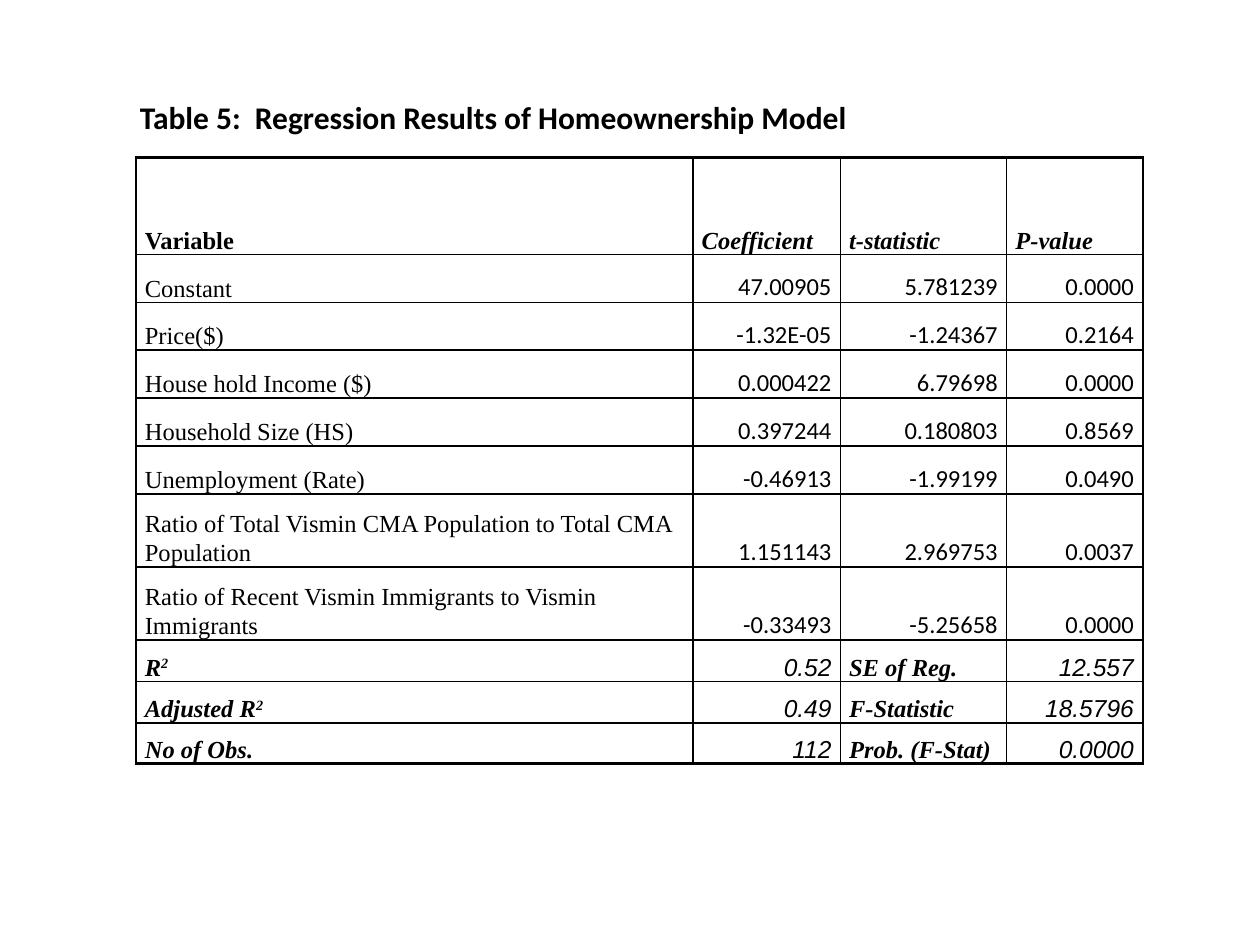
import lxml.etree
import pptx
import pptx.dml.color
import pptx.enum.text
import pptx.oxml.ns
import pptx.util

Inches = pptx.util.Inches
Pt = pptx.util.Pt
ALIGN = pptx.enum.text.PP_ALIGN
ANCHOR = pptx.enum.text.MSO_ANCHOR
COLORS = {"ink": "000000", "paper": "FFFFFF"}

SERIF = {"name": "Times New Roman", "bold": False, "italic": False}
NUMBER = {"name": "Calibri", "bold": False, "italic": False}
HEADING = {"name": "Times New Roman", "bold": True, "italic": False}
LABEL = {"name": "Times New Roman", "bold": True, "italic": True}
SUMMARY = {"name": "Arial", "bold": False, "italic": True}

HEADER = ["Variable", "Coefficient", "t-statistic", "P-value"]
ESTIMATES = [
    ["Constant", "47.00905", "5.781239", "0.0000"],
    ["Price($)", "-1.32E-05", "-1.24367", "0.2164"],
    ["House hold Income ($)", "0.000422", "6.79698", "0.0000"],
    ["Household Size (HS)", "0.397244", "0.180803", "0.8569"],
    ["Unemployment (Rate)", "-0.46913", "-1.99199", "0.0490"],
    ["Ratio of Total Vismin CMA Population to Total CMA Population",
     "1.151143", "2.969753", "0.0037"],
    ["Ratio of Recent Vismin Immigrants to Vismin Immigrants",
     "-0.33493", "-5.25658", "0.0000"],
]
FIT = [
    ["R^2", "0.52", "SE of Reg.", "12.557"],
    ["Adjusted R^2", "0.49", "F-Statistic", "18.5796"],
    ["No of Obs.", "112", "Prob. (F-Stat)", "0.0000"],
]
COLUMN_WIDTHS = [4.42, 1.17, 1.32, 1.08]
ROW_HEIGHTS = [0.77] + [0.38] * 5 + [0.58] * 2 + [0.33, 0.33, 0.32]


class SlideBuilder:
    def __init__(self, deck):
        self.slide = deck.slides.add_slide(deck.slide_layouts[5])

    def set_format(self, target, values):
        for name, value in values.items():
            setattr(target, name, value)

    def add_text(self, para, text, size, style):
        base, _, exponent = text.partition("^")
        for part, baseline in ((base, None), (exponent, "30000")):
            if part:
                span = para.add_run()
                span.text = part
                self.set_format(span.font, {"size": Pt(size), **style})
                span.font.color.rgb = pptx.dml.color.RGBColor.from_string(COLORS["ink"])
                if baseline:
                    span.font._element.set("baseline", baseline)

    def title(self, text, left, top, width, height):
        box = self.slide.shapes.title
        self.set_format(box, {"left": Inches(left), "top": Inches(top),
                              "width": Inches(width), "height": Inches(height)})
        self.set_format(box.text_frame, {"margin_left": Inches(0.61), "word_wrap": True,
                                         "vertical_anchor": ANCHOR.MIDDLE})
        para = box.text_frame.paragraphs[0]
        para.alignment = ALIGN.LEFT
        self.add_text(para, text, 18, {"name": "Calibri", "bold": True})

    def border(self, cell, side, width):
        properties = cell._tc.get_or_add_tcPr()
        line = lxml.etree.SubElement(properties, pptx.oxml.ns.qn(f"a:ln{side}"), w=str(Pt(width)))
        fill = lxml.etree.SubElement(line, pptx.oxml.ns.qn("a:solidFill"))
        lxml.etree.SubElement(fill, pptx.oxml.ns.qn("a:srgbClr"), val=COLORS["ink"])

    def cell(self, cell, text, style, align, spacing, borders):
        self.set_format(cell, {"margin_left": Inches(0.07), "margin_right": Inches(0.07),
                               "margin_top": 0, "margin_bottom": 0,
                               "vertical_anchor": ANCHOR.BOTTOM})
        for side, width in borders.items():
            self.border(cell, side, width)
        cell.fill.solid()
        cell.fill.fore_color.rgb = pptx.dml.color.RGBColor.from_string(COLORS["paper"])
        para = cell.text_frame.paragraphs[0]
        self.set_format(para, {"alignment": align, "line_spacing": spacing})
        self.add_text(para, text, 14, style)

    def table(self, rows, left, top):
        frame = self.slide.shapes.add_table(
            len(rows), len(COLUMN_WIDTHS), Inches(left), Inches(top),
            Inches(sum(COLUMN_WIDTHS)), Inches(sum(ROW_HEIGHTS)))
        table = frame.table
        self.set_format(table, {"first_row": False, "horz_banding": False})
        for column, width in zip(table.columns, COLUMN_WIDTHS):
            column.width = Inches(width)
        for row, height in zip(table.rows, ROW_HEIGHTS):
            row.height = Inches(height)
        last_row, last_column = len(rows) - 1, len(COLUMN_WIDTHS) - 1
        for r, texts in enumerate(rows):
            for c, text in enumerate(texts):
                if r == 0:
                    style, align = (LABEL if c else HEADING), ALIGN.LEFT
                elif r <= len(ESTIMATES):
                    style, align = (NUMBER, ALIGN.RIGHT) if c else (SERIF, ALIGN.LEFT)
                else:
                    style, align = (SUMMARY, ALIGN.RIGHT) if c % 2 else (LABEL, ALIGN.LEFT)
                borders = {"L": 1 if c else 1.5, "R": 1.5 if c == last_column else 1,
                           "T": 1 if r else 1.5, "B": 2.25 if r == last_row else 1}
                self.cell(table.cell(r, c), text, style, align, 1.07 if r else 2.0, borders)


def main():
    deck = pptx.Presentation()
    deck.slide_width, deck.slide_height = Inches(10), Inches(7.5)
    page = SlideBuilder(deck)
    page.table([HEADER] + ESTIMATES + FIT, 1.08, 1.25)
    page.title("Table 5:  Regression Results of Homeownership Model", 0.5, 0.3, 9, 1.25)
    deck.save("out.pptx")


if __name__ == "__main__":
    main()
